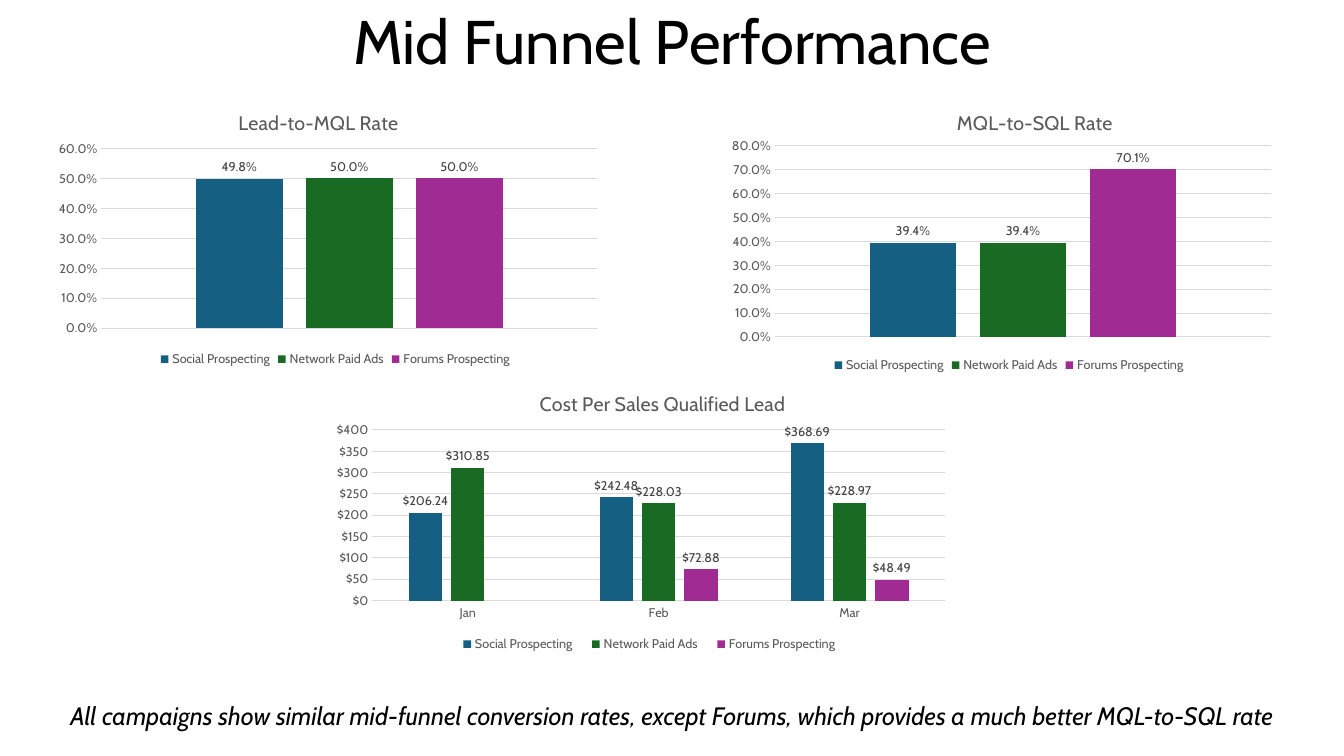
import pptx
import pptx.chart.data
import pptx.dml.color
import pptx.enum.chart
import pptx.enum.text
import pptx.oxml
import pptx.oxml.ns
import pptx.util

RGBColor = pptx.dml.color.RGBColor
BLACK = RGBColor(0x00, 0x00, 0x00)
LABEL_GRAY = RGBColor(0x40, 0x40, 0x40)
TEXT_GRAY = RGBColor(0x59, 0x59, 0x59)
LINE_GRAY = RGBColor(0xD9, 0xD9, 0xD9)
BLUE = RGBColor(0x15, 0x60, 0x82)
GREEN = RGBColor(0x19, 0x6B, 0x24)
PURPLE = RGBColor(0xA0, 0x2B, 0x93)

CAMPAIGNS = {
    "Social Prospecting": BLUE,
    "Network Paid Ads": GREEN,
    "Forums Prospecting": PURPLE,
}
COLUMNS, ROWS = 40, 24


def set_attributes(target, values):
    for name, value in values.items():
        setattr(target, name, value)


def set_layout(element, index, shares, inner=False):
    """Place a chart part at shares (x, y, width, height) of its chart."""
    for old_layout in element.findall(pptx.oxml.ns.qn("c:layout")):
        element.remove(old_layout)
    target = '<c:layoutTarget val="inner"/>' if inner else ""
    modes = '<c:xMode val="edge"/><c:yMode val="edge"/>'
    sizes = "".join(f'<c:{key} val="{share}"/>' for key, share in zip("xywh", shares))
    element.insert(index, pptx.oxml.parse_xml(
        f'<c:layout {pptx.oxml.ns.nsdecls("c")}><c:manualLayout>'
        f"{target}{modes}{sizes}</c:manualLayout></c:layout>"))


class FunnelSlide:
    font_name = "Cabin"

    def __init__(self, presentation):
        self.column = presentation.slide_width / COLUMNS
        self.row = presentation.slide_height / ROWS
        self.slide = presentation.slides.add_slide(presentation.slide_layouts[5])

    def box(self, left, top, width, height):
        return (round(left * self.column), round(top * self.row),
                round(width * self.column), round(height * self.row))

    def style_font(self, font, size, color, **values):
        set_attributes(font, {"name": self.font_name, "size": pptx.util.Pt(size),
                              "bold": False, **values})
        font.color.rgb = color

    def fill_text(self, shape, text, size, **values):
        set_attributes(shape.text_frame, {
            "word_wrap": True, "auto_size": pptx.enum.text.MSO_AUTO_SIZE.NONE})
        paragraph = shape.text_frame.paragraphs[0]
        paragraph.alignment = pptx.enum.text.PP_ALIGN.CENTER
        run = paragraph.add_run()
        run.text = text
        self.style_font(run.font, size, BLACK, **values)
        return paragraph

    def title(self, text, box):
        shape = self.slide.shapes.title
        set_attributes(shape, dict(zip(("left", "top", "width", "height"), self.box(*box))))
        self.fill_text(shape, text, 44).line_spacing = 0.9
        shape.text_frame.vertical_anchor = pptx.enum.text.MSO_ANCHOR.MIDDLE

    def caption(self, text, box):
        self.fill_text(self.slide.shapes.add_textbox(*self.box(*box)), text, 18, italic=True)

    def chart(self, title, box, categories, values, maximum, step, axis_format,
              label_format, plot_shares, title_shares, legend_shares=None,
              show_categories=False):
        data = pptx.chart.data.CategoryChartData()
        data.categories = categories
        for name, series_values in zip(CAMPAIGNS, values):
            data.add_series(name, series_values)
        chart = self.slide.shapes.add_chart(
            pptx.enum.chart.XL_CHART_TYPE.COLUMN_CLUSTERED, *self.box(*box), data).chart
        self.style_font(chart.font, 10, BLACK)

        # Columns and their labels
        plot = chart.plots[0]
        set_attributes(plot, {"gap_width": 219, "overlap": -27, "vary_by_categories": False})
        for series, color in zip(plot.series, CAMPAIGNS.values()):
            series.format.fill.solid()
            series.format.fill.fore_color.rgb = color
            labels = series.data_labels
            set_attributes(labels, {
                "show_value": True, "number_format": label_format,
                "number_format_is_linked": False,
                "position": pptx.enum.chart.XL_LABEL_POSITION.OUTSIDE_END})
            self.style_font(labels.font, 9, LABEL_GRAY)

        # Axes
        no_tick = pptx.enum.chart.XL_TICK_MARK.NONE
        for axis in (chart.category_axis, chart.value_axis):
            set_attributes(axis, {"major_tick_mark": no_tick, "minor_tick_mark": no_tick})
            self.style_font(axis.tick_labels.font, 9, TEXT_GRAY)
        set_attributes(chart.value_axis, {
            "minimum_scale": 0, "maximum_scale": maximum, "major_unit": step,
            "has_major_gridlines": True})
        set_attributes(chart.value_axis.tick_labels, {
            "number_format": axis_format, "number_format_is_linked": False})
        chart.value_axis.format.line.fill.background()
        chart.category_axis.visible = show_categories
        for line in (chart.value_axis.major_gridlines.format.line,
                     chart.category_axis.format.line):
            line.color.rgb = LINE_GRAY
            line.width = pptx.util.Pt(0.75)

        # Title and legend
        chart.has_title = True
        frame = chart.chart_title.text_frame
        frame.text = title
        self.style_font(frame.paragraphs[0].runs[0].font, 14, TEXT_GRAY)
        chart.has_legend = True
        set_attributes(chart.legend, {
            "position": pptx.enum.chart.XL_LEGEND_POSITION.BOTTOM,
            "include_in_layout": False})
        self.style_font(chart.legend.font, 9, TEXT_GRAY)

        # Placing of the chart parts
        chart_space = chart.element
        set_layout(chart_space.find(".//" + pptx.oxml.ns.qn("c:plotArea")), 0,
                   plot_shares, inner=True)
        set_layout(chart_space.find(".//" + pptx.oxml.ns.qn("c:title")), 1, title_shares)
        if legend_shares:
            set_layout(chart_space.find(".//" + pptx.oxml.ns.qn("c:legend")), 1,
                       legend_shares)


def main():
    presentation = pptx.Presentation()
    presentation.slide_width = pptx.util.Inches(13.33)
    presentation.slide_height = pptx.util.Inches(7.5)
    funnel = FunnelSlide(presentation)
    funnel.title("Mid Funnel Performance", (2.76, 0.1, 34.5, 2.62))

    # Conversion rates
    rate_style = {"categories": ["1"], "step": 0.1,
                  "axis_format": "0.0%", "label_format": "0.0%"}
    funnel.chart("Lead-to-MQL Rate", (1.68, 2.72, 16.6, 9.06),
                 values=[[0.498], [0.5], [0.5]], maximum=0.6,
                 plot_shares=(0.08, 0.22, 0.89, 0.63),
                 title_shares=(0.32, 0.07), **rate_style)
    funnel.chart("MQL-to-SQL Rate", (21.73, 2.91, 16.6, 9.06),
                 values=[[0.394], [0.394], [0.701]], maximum=0.8,
                 plot_shares=(0.08, 0.19, 0.89, 0.67),
                 title_shares=(0.4, 0.05), **rate_style)

    # Monthly cost
    funnel.chart("Cost Per Sales Qualified Lead", (9.96, 11.42, 18.73, 10.62),
                 categories=["Jan", "Feb", "Mar"],
                 values=[[206.24, 242.48, 368.69], [310.85, 228.03, 228.97],
                         [None, 72.88, 48.49]],
                 maximum=400, step=50, axis_format='"$"#,##0',
                 label_format='"$"#,##0.00', show_categories=True,
                 plot_shares=(0.06, 0.21, 0.91, 0.51), title_shares=(0.32, 0.08),
                 legend_shares=(0.18, 0.81, 0.64, 0.08))

    # Conclusion
    funnel.caption("All campaigns show similar mid-funnel conversion rates, except Forums, "
                   "which provides a much better MQL-to-SQL rate", (0, 22.08, 40, 1.28))
    presentation.save("out.pptx")


if __name__ == "__main__":
    main()
